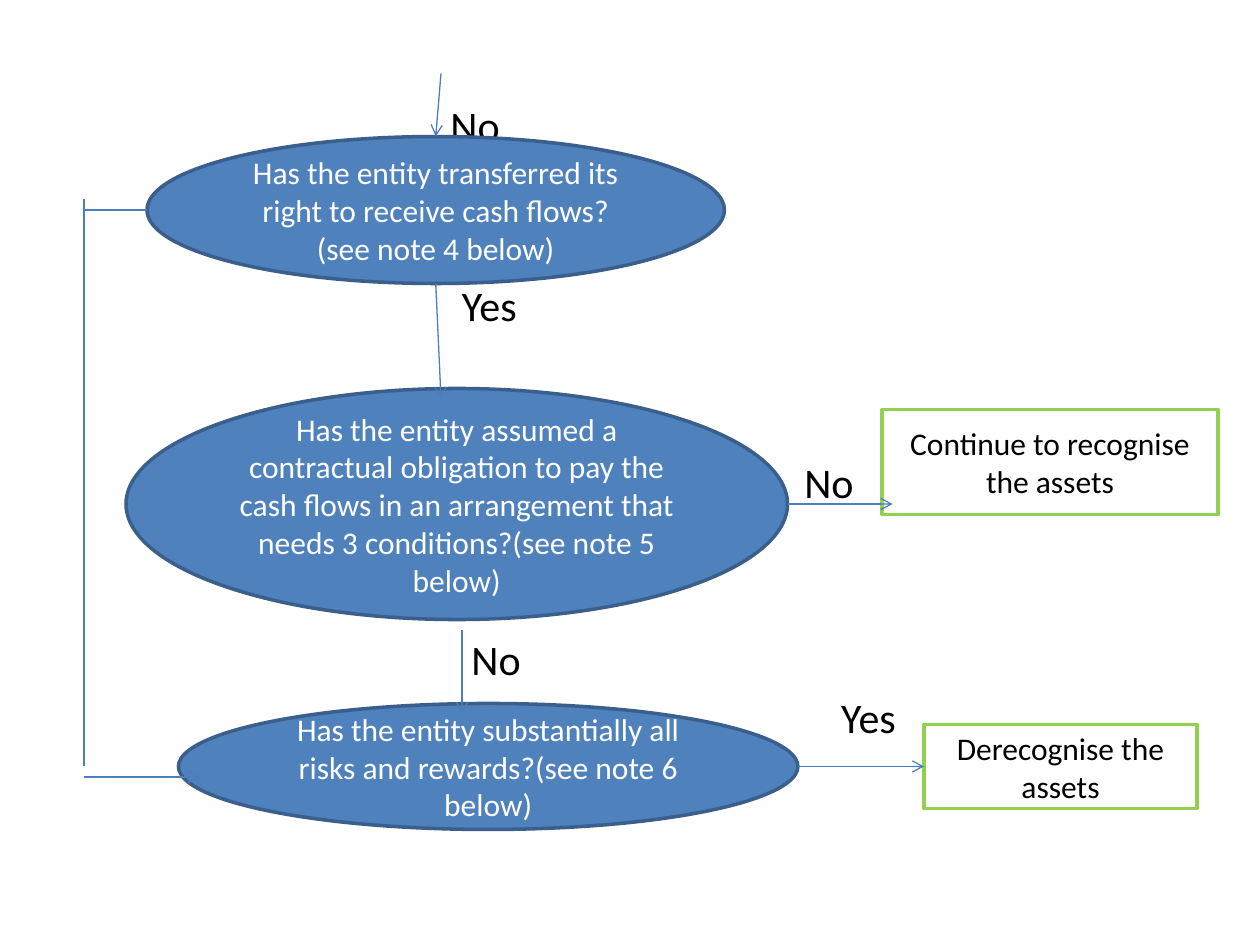
from lxml import etree
from pptx import Presentation
from pptx.dml.color import RGBColor
from pptx.enum.shapes import MSO_CONNECTOR, MSO_SHAPE
from pptx.enum.text import MSO_ANCHOR, PP_ALIGN
from pptx.oxml.ns import qn
from pptx.util import Emu, Pt

PX = 7620
FONT = "Calibri"
BLUE = RGBColor(0x4F, 0x81, 0xBD)
DARK_BLUE = RGBColor(0x3A, 0x5F, 0x8C)
LINE_BLUE = RGBColor(0x4B, 0x7E, 0xBC)
GREEN = RGBColor(0x92, 0xD0, 0x50)
WHITE = RGBColor(0xFF, 0xFF, 0xFF)
BLACK = RGBColor(0x00, 0x00, 0x00)


def px(*lengths):
    """Turn px lengths into EMU."""
    return [Emu(n * PX) for n in lengths]


def set_text(tf, text, size, color, align):
    """Write one paragraph of uniformly styled text."""
    tf.word_wrap = True
    p = tf.paragraphs[0]
    p.text = text
    p.alignment = align
    p.font.name = FONT
    p.font.size = Pt(size)
    p.font.color.rgb = color


def add_label(slide, text, left, top):
    """Add a Yes or No label."""
    tf = slide.shapes.add_textbox(*px(left, top, 80, 49)).text_frame
    tf.margin_left = tf.margin_right = tf.margin_top = tf.margin_bottom = 0
    set_text(tf, text, 24, BLACK, PP_ALIGN.LEFT)


def add_node(slide, kind, text, box, fill, line, color):
    """Add a filled and outlined shape with centred text."""
    sp = slide.shapes.add_shape(kind, *px(*box))
    sp.shadow.inherit = False
    sp.fill.solid()
    sp.fill.fore_color.rgb = fill
    sp.line.color.rgb = line
    sp.line.width = Pt(2)
    sp.text_frame.vertical_anchor = MSO_ANCHOR.MIDDLE
    set_text(sp.text_frame, text, 18, color, PP_ALIGN.CENTER)
    return sp


def add_question(slide, text, *box):
    """Add a decision ellipse."""
    return add_node(slide, MSO_SHAPE.OVAL, text, box, BLUE, DARK_BLUE, WHITE)


def add_outcome(slide, text, *box):
    """Add an outcome rectangle."""
    return add_node(slide, MSO_SHAPE.RECTANGLE, text, box, WHITE, GREEN, BLACK)


def add_line(slide, *ends, arrow=False):
    """Add a straight connector, with an open arrowhead if asked."""
    cxn = slide.shapes.add_connector(MSO_CONNECTOR.STRAIGHT, *px(*ends))
    cxn.line.color.rgb = LINE_BLUE
    cxn.line.width = Pt(0.75)
    if arrow:
        ln = cxn.line._get_or_add_ln()
        etree.SubElement(ln, qn("a:tailEnd"), type="arrow")
    etree.SubElement(cxn._element.spPr, qn("a:effectLst"))
    return cxn


def main():
    """Build the derecognition flowchart."""
    prs = Presentation()
    prs.slide_width, prs.slide_height = px(1200, 900)
    slide = prs.slides.add_slide(prs.slide_layouts[6])

    for text, left, top in (
        ("No", 429, 95),
        ("Yes", 440, 266),
        ("No", 766, 435),
        ("No", 449, 603),
        ("Yes", 801, 659),
    ):
        add_label(slide, text, left, top)

    transferred = add_question(
        slide,
        "Has the entity transferred its right to receive cash flows?(see note 4 below)",
        140, 130, 550, 140)
    add_question(
        slide,
        "Has the entity assumed a contractual obligation to pay the cash flows "
        "in an arrangement that needs 3 conditions?(see note 5 below)",
        120, 370, 630, 220)
    add_question(
        slide,
        "Has the entity substantially all risks and rewards?(see note 6 below)",
        170, 670, 590, 120)
    add_outcome(slide, "Continue to recognise the assets", 840, 390, 320, 100)
    derecognise = add_outcome(slide, "Derecognise the assets", 880, 690, 260, 80)

    add_line(slide, 750, 480, 850, 480, arrow=True)
    add_line(slide, 760, 730, 880, 730, arrow=True).end_connect(derecognise, 1)
    add_line(slide, 420, 70, 415, 130, arrow=True).end_connect(transferred, 0)
    add_line(slide, 140, 200, 80, 200)
    add_line(slide, 80, 190, 80, 730)
    add_line(slide, 80, 740, 190, 740, arrow=True)
    add_line(slide, 415, 270, 420, 380, arrow=True)
    add_line(slide, 440, 600, 440, 680, arrow=True)

    prs.save("out.pptx")


if __name__ == "__main__":
    main()
